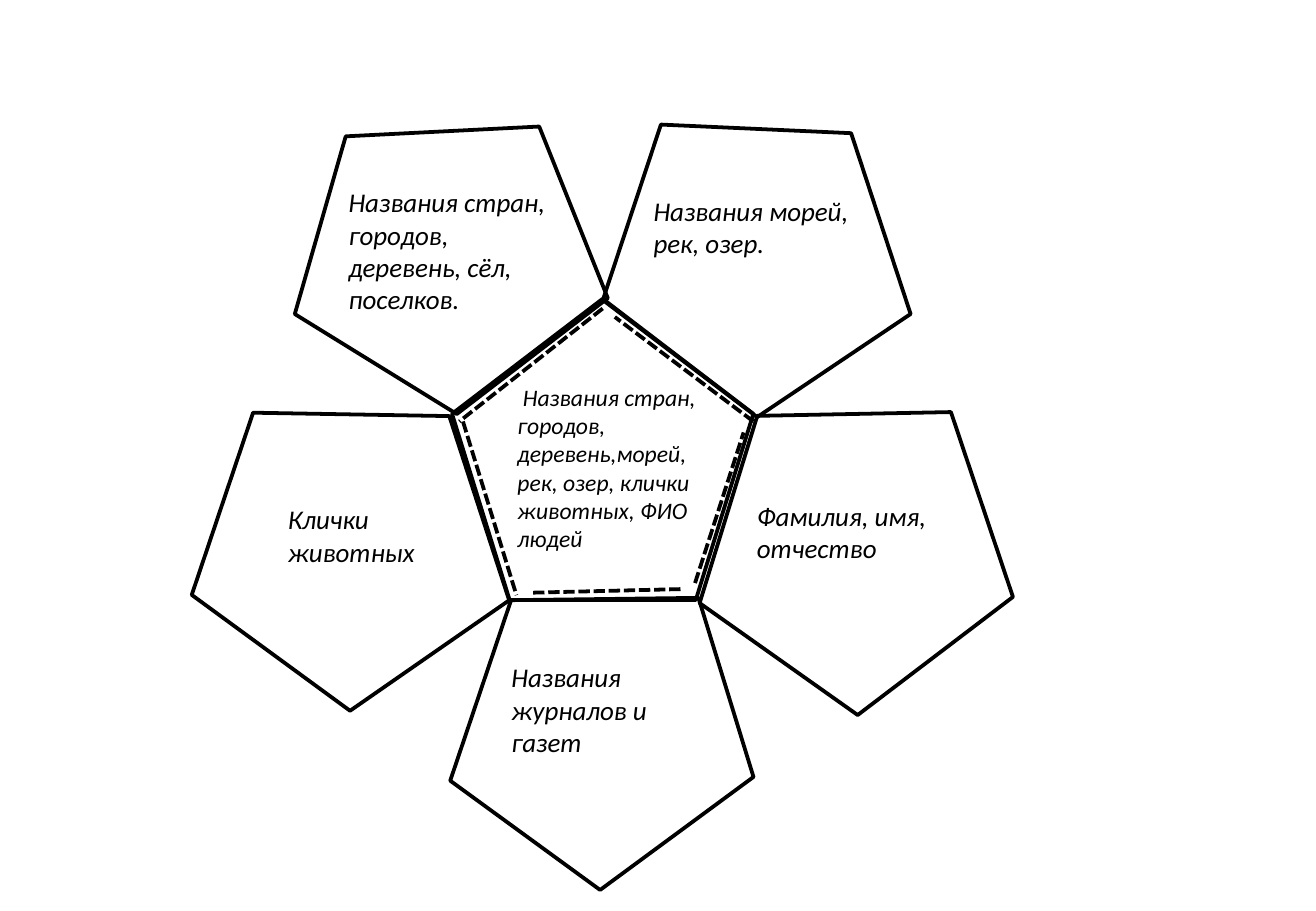
"""Build a flower of five pentagons on proper names around a central one."""
import dataclasses
import typing

import pptx
import pptx.dml.color
import pptx.enum.dml
import pptx.enum.shapes
import pptx.oxml.ns
import pptx.util
from lxml import etree

Inches = pptx.util.Inches
Pt = pptx.util.Pt
HUES = {"ink": "000000"}
INK = pptx.dml.color.RGBColor.from_string(HUES["ink"])
EDGE = {"width": Pt(2.25)}
DASH = EDGE | {"dash_style": pptx.enum.dml.MSO_LINE.SQUARE_DOT}
FONT = {"name": "Calibri", "italic": True}


@dataclasses.dataclass
class Petal:
    left: float
    top: float
    width: float
    height: float
    turn: float = 0


@dataclasses.dataclass
class Seam:
    x1: float
    y1: float
    x2: float
    y2: float


@dataclasses.dataclass
class Label:
    left: float
    top: float
    width: float
    height: float
    text: str
    size: int = 16


PETALS = [
    Petal(3.8, 4.69, 2.47, 2.42, 36.1),
    Petal(5.01, 0.86, 2.58, 2.33, 37.2),
    Petal(3.72, 2.46, 2.48, 2.48),
    Petal(5.86, 3.33, 2.61, 2.45, 107.1),
    Petal(1.73, 3.3, 2.56, 2.49, 108.6),
    Petal(2.41, 1.08, 2.58, 2.33, 177.1),
]
SEAMS = [
    Seam(3.81, 3.47, 4.25, 4.9),
    Seam(4.96, 2.54, 3.78, 3.47),
    Seam(5.6, 4.85, 4.36, 4.88),
    Seam(6.2, 3.47, 5.06, 2.61),
    Seam(5.72, 4.8, 6.12, 3.56),
]
LABELS = [
    Label(4.16, 3.1, 1.81, 1.85,
          " Названия стран, городов, деревень,морей, рек, озер, "
          "клички животных, ФИО людей", 14),
    Label(2.77, 1.48, 1.86, 1.48,
          "Названия стран, городов, деревень, сёл, поселков."),
    Label(5.28, 1.55, 1.83, 0.94, "Названия морей, рек, озер."),
    Label(2.27, 4.09, 1.33, 0.64, "Клички животных"),
    Label(6.13, 4.06, 1.78, 0.64, "Фамилия, имя, отчество"),
    Label(4.11, 5.39, 1.65, 0.91, "Названия журналов и газет"),
]


def style(item: typing.Any, looks: dict[str, typing.Any]) -> None:
    """Set each attribute named in looks on the item."""
    for name, value in looks.items():
        setattr(item, name, value)


def add_petal(shapes: typing.Any, petal: Petal) -> None:
    """Draw one outlined pentagon."""
    shape = shapes.add_shape(
        pptx.enum.shapes.MSO_SHAPE.REGULAR_PENTAGON,
        Inches(petal.left), Inches(petal.top),
        Inches(petal.width), Inches(petal.height))
    shape.rotation = petal.turn
    shape.shadow.inherit = False
    shape.fill.background()
    shape.line.color.rgb = INK
    style(shape.line, EDGE)


def add_seam(shapes: typing.Any, seam: Seam) -> None:
    """Draw one dashed line inside the central pentagon."""
    line = shapes.add_connector(
        pptx.enum.shapes.MSO_CONNECTOR.STRAIGHT,
        Inches(seam.x1), Inches(seam.y1), Inches(seam.x2), Inches(seam.y2))
    line.line.color.rgb = INK
    style(line.line, DASH)
    props = line._element.spPr
    etree.SubElement(props, pptx.oxml.ns.qn("a:effectLst"))


def add_label(shapes: typing.Any, label: Label) -> None:
    """Write one wrapped italic label."""
    box = shapes.add_textbox(
        Inches(label.left), Inches(label.top),
        Inches(label.width), Inches(label.height))
    box.text_frame.word_wrap = True
    run = box.text_frame.paragraphs[0].add_run()
    run.text = label.text
    run.font.color.rgb = INK
    style(run.font, FONT | {"size": Pt(label.size)})


def main() -> None:
    """Build and save the slide."""
    deck = pptx.Presentation()
    style(deck, {"slide_width": Inches(10.83), "slide_height": Inches(7.5)})
    shapes = deck.slides.add_slide(deck.slide_layouts[6]).shapes
    for petal in PETALS:
        add_petal(shapes, petal)
    for seam in SEAMS:
        add_seam(shapes, seam)
    for label in LABELS:
        add_label(shapes, label)
    deck.save("out.pptx")


if __name__ == "__main__":
    main()
